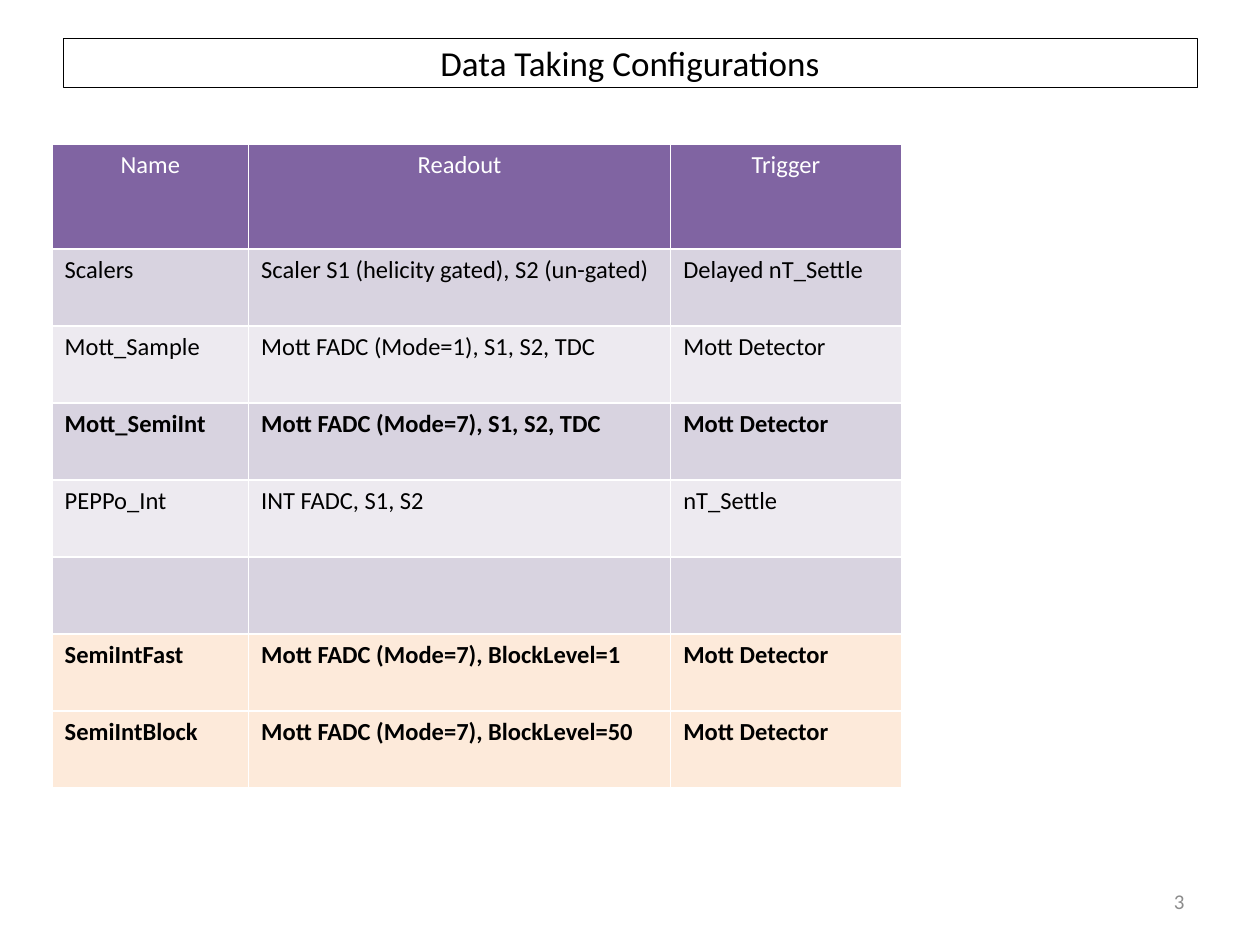
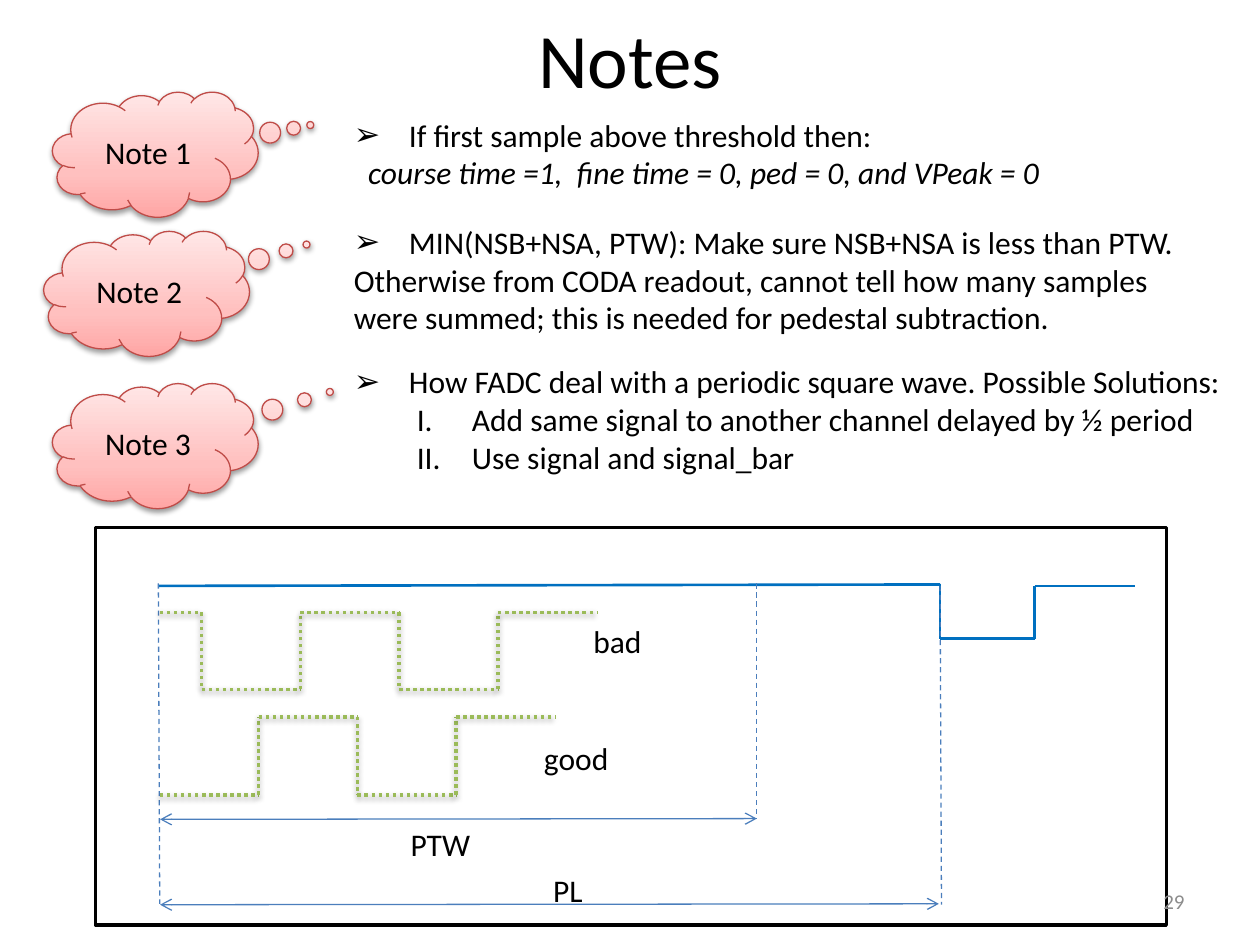
from dataclasses import dataclass
from itertools import pairwise
from typing import NamedTuple

from pptx import Presentation
from pptx.dml.color import RGBColor
from pptx.enum.dml import MSO_LINE
from pptx.enum.shapes import MSO_CONNECTOR, MSO_SHAPE
from pptx.enum.text import MSO_ANCHOR, MSO_AUTO_SIZE, PP_ALIGN
from pptx.oxml import parse_xml
from pptx.oxml.ns import nsdecls, qn
from pptx.util import Pt

LEFT, CENTER, RIGHT = PP_ALIGN.LEFT, PP_ALIGN.CENTER, PP_ALIGN.RIGHT
TOP, MIDDLE = MSO_ANCHOR.TOP, MSO_ANCHOR.MIDDLE
NO_FIT, GROW = MSO_AUTO_SIZE.NONE, MSO_AUTO_SIZE.SHAPE_TO_FIT_TEXT
DASH, DOTS = MSO_LINE.DASH, MSO_LINE.ROUND_DOT
STRAIGHT = MSO_CONNECTOR.STRAIGHT
RECTANGLE, CLOUD = MSO_SHAPE.RECTANGLE, MSO_SHAPE.CLOUD_CALLOUT
TITLE_ONLY, COMPARISON = 5, 4


def rgb(code: str) -> RGBColor:
    return RGBColor.from_string(code)


@dataclass(frozen=True)
class Theme:
    font: str = "Calibri"
    ink: RGBColor = rgb("000000")
    paper: RGBColor = rgb("FFFFFF")
    page_grey: RGBColor = rgb("8C8C8C")
    header: RGBColor = rgb("8064A2")
    band_dark: RGBColor = rgb("D8D3E0")
    band_light: RGBColor = rgb("EDEAF0")
    highlight: RGBColor = rgb("FDEADA")
    signal: RGBColor = rgb("0070C0")
    guide: RGBColor = rgb("4B7EBC")
    wave: RGBColor = rgb("9BBB59")
    cloud_edge: RGBColor = rgb("BF4C48")
    cloud_stops: tuple = ((0, "FFA6A5"), (35, "FFC0BF"), (100, "FFE7E7"))
    big_title: float = 44
    boxed_title: float = 20
    body: float = 18
    cell: float = 14
    page: float = 12


THEME = Theme()


class Box(NamedTuple):
    x: float
    y: float
    width: float
    height: float

    def lengths(self) -> tuple:
        return tuple(Pt(value) for value in self)


class Readout(NamedTuple):
    name: str
    readout: str
    trigger: str
    bold: bool = False
    highlighted: bool = False


class Stroke(NamedTuple):
    color: RGBColor
    width: float
    dash: MSO_LINE | None = None
    arrows: bool = False
    shadow: bool = False


class NoteLine(NamedTuple):
    text: str
    bullet: str = "buNone"
    margin: float = 0
    italic: bool = False


class Note(NamedTuple):
    cloud: Box
    tail: tuple[float, float]
    area: Box
    lines: tuple[NoteLine, ...]


class Label(NamedTuple):
    text: str
    area: Box


HANGING = 31.5
ARROW = 'buChar char="➢"'
ROMAN = 'buAutoNum type="romanUcPeriod"'
PAGE_AREA = Box(516, 500.5, 168, 28.75)

READOUTS = (
    Readout("Scalers", "Scaler S1 (helicity gated), S2 (un-gated)", "Delayed nT_Settle"),
    Readout("Mott_Sample", "Mott FADC (Mode=1), S1, S2, TDC", "Mott Detector"),
    Readout("Mott_SemiInt", "Mott FADC (Mode=7), S1, S2, TDC", "Mott Detector", True),
    Readout("PEPPo_Int", "INT FADC, S1, S2", "nT_Settle"),
    Readout("", "", ""),
    Readout("SemiIntFast", "Mott FADC (Mode=7), BlockLevel=1", "Mott Detector", True, True),
    Readout("SemiIntBlock", "Mott FADC (Mode=7), BlockLevel=50", "Mott Detector", True, True),
)
COLUMN_WIDTHS = (112.3, 241.2, 131.8)
HEADER_HEIGHT, ROW_HEIGHT = 60, 44

NOTES = (
    Note(Box(30, 52.5, 117.5, 71.5), (0.754, -0.234), Box(195, 62.5, 425, 51), (
        NoteLine("If first sample above threshold then:", ARROW, HANGING),
        NoteLine("course time =1,  fine time = 0, ped = 0, and VPeak = 0", margin=8.2, italic=True),
    )),
    Note(Box(25, 132, 117.5, 71.5), (0.778, -0.391), Box(195, 123.7, 487.5, 72.7), (
        NoteLine("MIN(NSB+NSA, PTW): Make sure NSB+NSA is less than PTW.", ARROW, HANGING),
        NoteLine("Otherwise from CODA readout, cannot tell how many samples"),
        NoteLine("were summed; this is needed for pedestal subtraction."),
    )),
    Note(Box(30, 219, 117.5, 71.5), (0.849, -0.43), Box(195, 203.5, 515.5, 72.7), (
        NoteLine("How FADC deal with a periodic square wave. Possible Solutions:", ARROW, HANGING),
        NoteLine("Add same signal to another channel delayed by ½ period", ROMAN, 67.5),
        NoteLine("Use signal and signal_bar", ROMAN, 67.5),
    )),
)

SIGNAL = Stroke(THEME.signal, 1.5)
GUIDE = Stroke(THEME.guide, 0.75, DASH)
SPAN = Stroke(THEME.guide, 0.75, arrows=True)
WAVE = Stroke(THEME.wave, 2, DOTS, shadow=True)
TIMING_FRAME = Box(54.5, 301.5, 612, 227)
HALF_PERIOD = 56.45
WAVE_START = 91.3
SIGNAL_POINTS = ((90.7, 334.8), (537.2, 334), (537.2, 365), (591.2, 365),
                 (591.2, 334.8), (648.7, 334.8))
GUIDES = (((537.2, 334.8), (538, 517)), ((90.5, 333.4), (91.3, 516.5)),
          ((432.5, 333.4), (432.5, 468)))
SPANS = (((91.5, 517), (536.5, 516.5)), ((91.5, 468.2), (432.5, 467.8)))
LABELS = (
    Label("PL", Box(309, 494, 32, 26)),
    Label("PTW", Box(227.5, 468, 49, 26)),
    Label("bad", Box(332, 352, 42.5, 29)),
    Label("good", Box(303.8, 419, 52, 29)),
)


def style_runs(paragraph, size: float, color: RGBColor = THEME.ink,
               align: PP_ALIGN = LEFT, bold: bool = False, italic: bool = False) -> None:
    paragraph.alignment = align
    for run in paragraph.runs:
        font = run.font
        font.name, font.size, font.bold, font.italic = THEME.font, Pt(size), bold, italic
        font.color.rgb = color


def place(shape, area: Box) -> None:
    shape.left, shape.top, shape.width, shape.height = area.lengths()


def set_title(slide, text: str, area: Box, size: float):
    title = slide.shapes.title
    place(title, area)
    frame = title.text_frame
    frame.text = text
    frame.vertical_anchor, frame.auto_size = MIDDLE, NO_FIT
    style_runs(frame.paragraphs[0], size, align=CENTER)
    return title


def add_page_number(slide, number: int) -> None:
    frame = slide.shapes.add_textbox(*PAGE_AREA.lengths()).text_frame
    frame.word_wrap, frame.vertical_anchor = True, MIDDLE
    frame.text = str(number)
    style_runs(frame.paragraphs[0], THEME.page, THEME.page_grey, RIGHT)


def add_effects(shape, shadow: bool) -> None:
    drop = ('<a:outerShdw blurRad="40000" dist="20000" dir="5400000" rotWithShape="0">'
            '<a:srgbClr val="000000"><a:alpha val="38000"/></a:srgbClr></a:outerShdw>')
    shape._element.spPr.append(parse_xml(
        f'<a:effectLst {nsdecls("a")}>{drop if shadow else ""}</a:effectLst>'))


def add_path(shapes, points, stroke: Stroke) -> None:
    for start, end in pairwise(points):
        segment = shapes.add_connector(STRAIGHT, *(Pt(value) for value in (*start, *end)))
        line = segment.line
        line.color.rgb, line.width = stroke.color, Pt(stroke.width)
        if stroke.dash:
            line.dash_style = stroke.dash
        if stroke.arrows:
            for tag in ("headEnd", "tailEnd"):
                line._get_or_add_ln().append(parse_xml(f'<a:{tag} {nsdecls("a")} type="arrow"/>'))
        add_effects(segment, stroke.shadow)


def square_wave(first_edge: float, edges: int, levels: tuple[float, float]) -> list:
    points = [(WAVE_START, levels[0])]
    for step in range(edges):
        x = first_edge + step * HALF_PERIOD
        points += [(x, levels[step % 2]), (x, levels[(step + 1) % 2])]
    return points + [(first_edge + edges * HALF_PERIOD, levels[edges % 2])]


def add_cloud(slide, text: str, note: Note) -> None:
    cloud = slide.shapes.add_shape(CLOUD, *note.cloud.lengths())
    cloud.adjustments[0], cloud.adjustments[1] = note.tail
    cloud.fill.gradient()
    gradient = cloud._element.spPr.find(qn("a:gradFill"))
    stops = "".join(f'<a:gs pos="{pos * 1000}"><a:srgbClr val="{color}"/></a:gs>'
                    for pos, color in THEME.cloud_stops)
    gradient.replace(gradient.find(qn("a:gsLst")),
                     parse_xml(f'<a:gsLst {nsdecls("a")}>{stops}</a:gsLst>'))
    gradient.find(qn("a:lin")).set("ang", "16200000")
    cloud.line.color.rgb, cloud.line.width = THEME.cloud_edge, Pt(0.75)
    add_effects(cloud, True)
    frame = cloud.text_frame
    frame.text, frame.vertical_anchor = text, MIDDLE
    style_runs(frame.paragraphs[0], THEME.body, align=CENTER)


def fill_note(body, note: Note) -> None:
    place(body, note.area)
    frame = body.text_frame
    frame.word_wrap, frame.auto_size, frame.vertical_anchor = False, GROW, TOP
    frame.text = "\n".join(line.text for line in note.lines)
    for paragraph, line in zip(frame.paragraphs, note.lines):
        paragraph.level = int(line.bullet == ROMAN)
        paragraph.space_before = Pt(0)
        style_runs(paragraph, THEME.body, italic=line.italic)
        properties = paragraph._p.get_or_add_pPr()
        properties.set("marL", str(Pt(line.margin)))
        properties.set("indent", str(Pt(0 if line.bullet == "buNone" else -HANGING)))
        properties.append(parse_xml(f'<a:{line.bullet} {nsdecls("a")}/>'))


def add_timing_diagram(slide) -> None:
    shapes = slide.shapes.add_group_shape().shapes
    frame = shapes.add_shape(RECTANGLE, *TIMING_FRAME.lengths())
    frame.shadow.inherit = False
    frame.fill.background()
    frame.line.color.rgb, frame.line.width = THEME.ink, Pt(2)
    add_path(shapes, SIGNAL_POINTS, SIGNAL)
    for guide in GUIDES:
        add_path(shapes, guide, GUIDE)
    for span in SPANS:
        add_path(shapes, span, SPAN)
    add_path(shapes, square_wave(115.2, 4, (350, 394)), WAVE)
    add_path(shapes, square_wave(147.8, 3, (454.3, 409.7)), WAVE)
    for label in LABELS:
        text_frame = shapes.add_textbox(*label.area.lengths()).text_frame
        text_frame.word_wrap, text_frame.text = False, label.text
        style_runs(text_frame.paragraphs[0], THEME.body)


def fill_row(row, texts, fill: RGBColor, color: RGBColor, align: PP_ALIGN, bold: bool) -> None:
    for cell, text in zip(row.cells, texts):
        cell.text = text
        cell.fill.solid()
        cell.fill.fore_color.rgb = fill
        style_runs(cell.text_frame.paragraphs[0], THEME.cell, color, align, bold)


def build_configurations(deck) -> None:
    slide = deck.slides.add_slide(deck.slide_layouts[TITLE_ONLY])
    title = set_title(slide, "Data Taking Configurations", Box(36, 21.6, 648, 28.2),
                      THEME.boxed_title)
    title.line.color.rgb, title.line.width = THEME.ink, Pt(0.25)
    area = Box(29.8, 82.4, sum(COLUMN_WIDTHS), HEADER_HEIGHT + ROW_HEIGHT * len(READOUTS))
    table = slide.shapes.add_table(len(READOUTS) + 1, len(COLUMN_WIDTHS), *area.lengths()).table
    for column, width in zip(table.columns, COLUMN_WIDTHS):
        column.width = Pt(width)
    header, *rows = table.rows
    header.height = Pt(HEADER_HEIGHT)
    fill_row(header, ("Name", "Readout", "Trigger"), THEME.header, THEME.paper, CENTER, False)
    for index, (row, mode) in enumerate(zip(rows, READOUTS)):
        row.height = Pt(ROW_HEIGHT)
        band = THEME.band_light if index % 2 else THEME.band_dark
        fill_row(row, mode[:3], THEME.highlight if mode.highlighted else band,
                 THEME.ink, LEFT, mode.bold)
    add_page_number(slide, 3)


def build_notes(deck) -> None:
    slide = deck.slides.add_slide(deck.slide_layouts[COMPARISON])
    set_title(slide, "Notes", Box(36, 0, 648, 66), THEME.big_title)
    *bodies, spare = list(slide.placeholders)[1:]
    spare._element.getparent().remove(spare._element)
    add_timing_diagram(slide)
    for number, (body, note) in enumerate(zip(bodies, NOTES), start=1):
        fill_note(body, note)
        add_cloud(slide, f"Note {number}", note)
    add_page_number(slide, 29)


def main() -> None:
    deck = Presentation()
    deck.slide_width, deck.slide_height = Pt(720), Pt(540)
    build_configurations(deck)
    build_notes(deck)
    deck.save("out.pptx")


if __name__ == "__main__":
    main()
